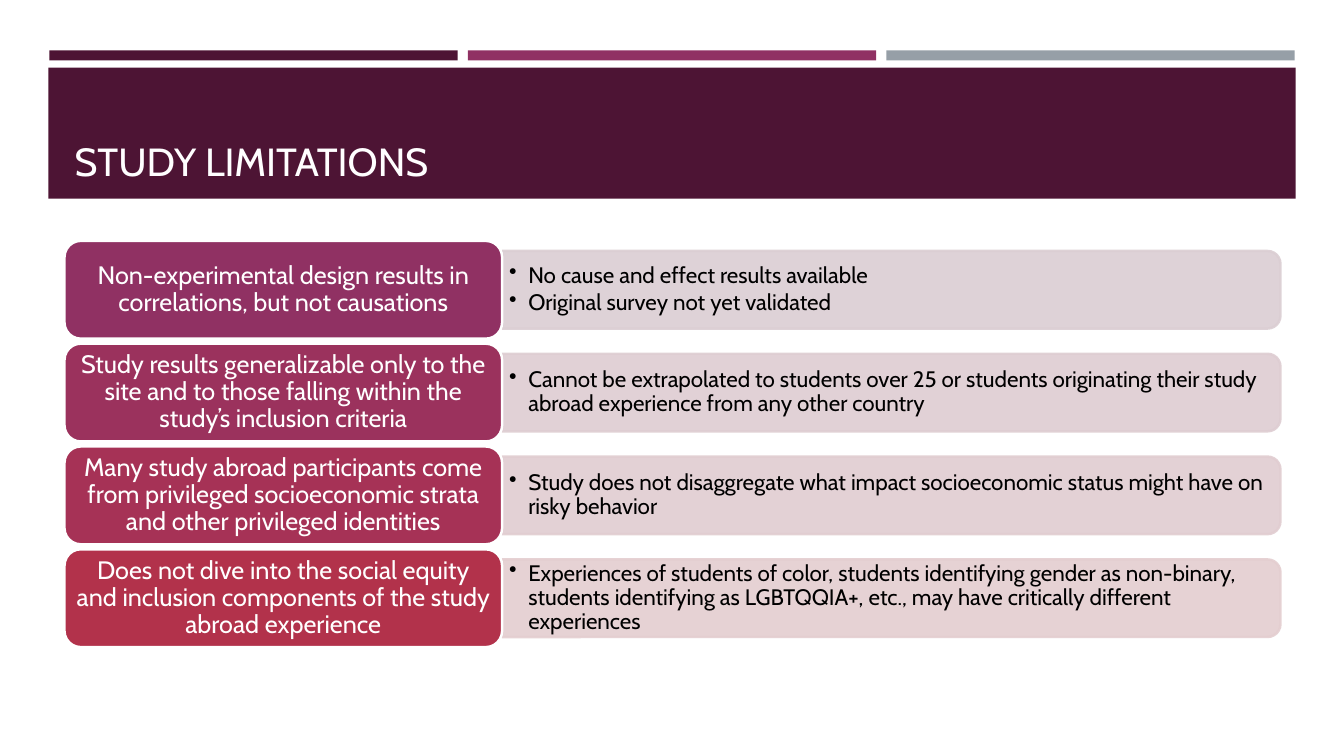
from pptx import Presentation
from pptx.dml.color import RGBColor
from pptx.enum.shapes import MSO_SHAPE
from pptx.enum.text import MSO_ANCHOR, MSO_AUTO_SIZE, PP_ALIGN
from pptx.oxml.ns import qn
from pptx.util import Inches, Pt
from lxml.etree import SubElement

FONT = "Cabin"
PLUM = RGBColor(0x4D, 0x14, 0x34)
MAGENTA = RGBColor(0x90, 0x31, 0x63)
GREY = RGBColor(0x96, 0x9F, 0xA7)
WHITE = RGBColor(0xFF, 0xFF, 0xFF)
TITLE_WHITE = RGBColor(0xFF, 0xFE, 0xFF)
BLACK = RGBColor(0, 0, 0)

# Label colour, panel colour, limitation, details
LIMITATIONS = [
    (MAGENTA, RGBColor(0xDB, 0xCE, 0xD3),
     "Non-experimental design results in correlations, but not causations",
     ["No cause and effect results available",
      "Original survey not yet validated"]),
    (RGBColor(0x9B, 0x32, 0x5D), RGBColor(0xDE, 0xCD, 0xD2),
     "Study results generalizable only to the site and to those falling "
     "within the study’s inclusion criteria",
     ["Cannot be extrapolated to students over 25 or students originating "
      "their study abroad experience from any other country"]),
    (RGBColor(0xA6, 0x32, 0x56), RGBColor(0xE1, 0xCD, 0xD1),
     "Many study abroad participants come from privileged socioeconomic "
     "strata and other privileged identities",
     ["Study does not disaggregate what impact socioeconomic status might "
      "have on risky behavior"]),
    (RGBColor(0xB2, 0x32, 0x4B), RGBColor(0xE4, 0xCE, 0xD0),
     "Does not dive into the social equity and inclusion components of the "
     "study abroad experience",
     ["Experiences of students of color, students identifying gender as "
      "non-binary, students identifying as LGBTQQIA+, etc., may have "
      "critically different experiences"]),
]

ROW_TOP, ROW_PITCH = 2.39, 1.02
LABEL_LEFT, LABEL_W, LABEL_H = 0.64, 4.34, 0.97
PANEL_LEFT, PANEL_W, PANEL_H = LABEL_LEFT + LABEL_W, 7.72, 0.77
DETAIL_W, DETAIL_H = 7.68, 0.7


def add_box(s, kind, left, top, width, height, fill, line=None):
    sp = s.shapes.add_shape(kind, Inches(left), Inches(top),
                            Inches(width), Inches(height))
    sp.shadow.inherit = False
    sp.fill.solid()
    sp.fill.fore_color.rgb = fill
    if line is None:
        sp.line.fill.background()
    else:
        sp.line.color.rgb = line
        sp.line.width = Pt(1.75)
    return sp


def set_frame(tf, inset_x, inset_y, anchor):
    tf.word_wrap = True
    tf.auto_size = MSO_AUTO_SIZE.NONE
    tf.vertical_anchor = anchor
    tf.margin_left = tf.margin_right = Inches(inset_x)
    tf.margin_top = tf.margin_bottom = Inches(inset_y)


def add_run(p, text, size, color):
    r = p.add_run()
    r.text = text
    r.font.name = FONT
    r.font.size = Pt(size)
    r.font.color.rgb = color


def add_header(s):
    for left, color in ((0.49, PLUM), (4.64, MAGENTA), (8.79, GREY)):
        add_box(s, MSO_SHAPE.RECTANGLE, left, 0.5, 4.05, 0.1, color)
    add_box(s, MSO_SHAPE.RECTANGLE, 0.48, 0.67, 12.37, 1.3, PLUM)

    title = s.shapes.title
    title.left, title.top = Inches(0.64), Inches(0.77)
    title.width, title.height = Inches(12.06), Inches(1.11)
    set_frame(title.text_frame, 0.1, 0.05, MSO_ANCHOR.BOTTOM)
    p = title.text_frame.paragraphs[0]
    p.alignment = PP_ALIGN.LEFT
    add_run(p, "STUDY LIMITATIONS", 28, TITLE_WHITE)
    # Bring the title in front of its band
    title.element.getparent().append(title.element)


def add_panel(s, middle, color):
    """Draw an upright shape and turn it, so its round corners face right."""
    sp = add_box(s, MSO_SHAPE.ROUND_2_SAME_RECTANGLE,
                 PANEL_LEFT + (PANEL_W - PANEL_H) / 2, middle - PANEL_W / 2,
                 PANEL_H, PANEL_W, color, color)
    sp.rotation = 90
    for clr in list(sp.element.spPr.iter(qn("a:srgbClr"))):
        SubElement(clr, qn("a:alpha"), val="90000")


def add_bullet(p):
    pPr = p._p.get_or_add_pPr()
    pPr.set("marL", str(Inches(0.19)))
    pPr.set("indent", str(Inches(-0.19)))
    SubElement(pPr, qn("a:buChar"), char="•")


def add_details(s, middle, details):
    tb = s.shapes.add_textbox(Inches(PANEL_LEFT), Inches(middle - DETAIL_H / 2),
                              Inches(DETAIL_W), Inches(DETAIL_H))
    tf = tb.text_frame
    set_frame(tf, 0.07, 0.03, MSO_ANCHOR.MIDDLE)
    for i, detail in enumerate(details):
        p = tf.add_paragraph() if i else tf.paragraphs[0]
        p.line_spacing = 0.9
        p.space_after = Pt(2.4)
        add_bullet(p)
        add_run(p, detail, 16, BLACK)


def add_label(s, top, text, color):
    sp = add_box(s, MSO_SHAPE.ROUNDED_RECTANGLE, LABEL_LEFT, top,
                 LABEL_W, LABEL_H, color, WHITE)
    set_frame(sp.text_frame, 0.07, 0.04, MSO_ANCHOR.MIDDLE)
    p = sp.text_frame.paragraphs[0]
    p.alignment = PP_ALIGN.CENTER
    p.line_spacing = 0.9
    add_run(p, text, 18, WHITE)


def main():
    prs = Presentation()
    prs.slide_width, prs.slide_height = Inches(13.33), Inches(7.5)
    s = prs.slides.add_slide(prs.slide_layouts[5])
    add_header(s)
    for i, (label_color, panel_color, label, details) in enumerate(LIMITATIONS):
        top = ROW_TOP + i * ROW_PITCH
        middle = top + LABEL_H / 2
        add_panel(s, middle, panel_color)
        add_details(s, middle, details)
        add_label(s, top, label, label_color)
    prs.save("out.pptx")


if __name__ == "__main__":
    main()
